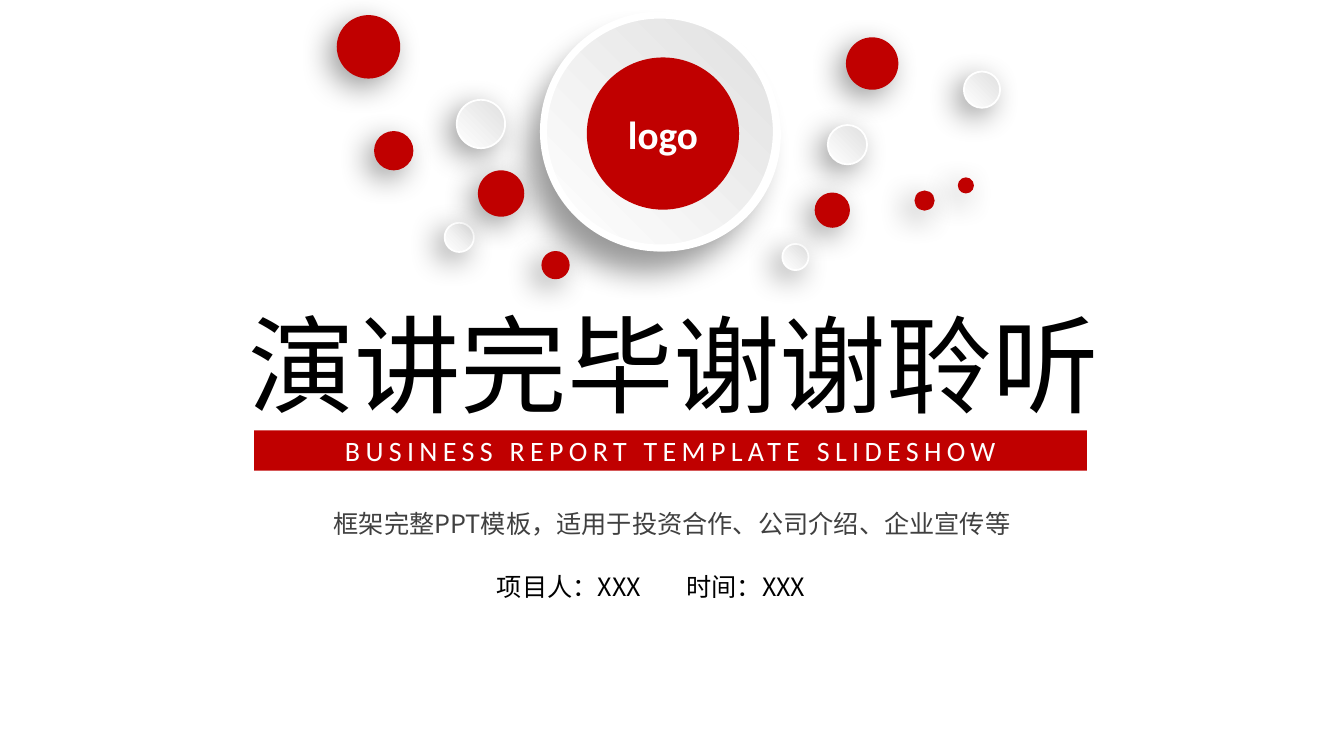
from lxml.etree import SubElement
from pptx import Presentation
from pptx.dml.color import RGBColor
from pptx.enum.shapes import MSO_SHAPE as Shape
from pptx.enum.text import MSO_ANCHOR as Anchor, MSO_AUTO_SIZE as AutoSize, PP_ALIGN as Align
from pptx.oxml.ns import qn
from pptx.util import Inches, Pt

# Content
TITLE = "演讲完毕谢谢聆听"
BANNER = "BUSINESS REPORT TEMPLATE SLIDESHOW"
SUMMARY = "框架完整PPT模板，适用于投资合作、公司介绍、企业宣传等"
DETAILS = "项目人：XXX\t时间：XXX"
BADGE = "logo"

COLORS = {"red": "C00000", "silver": "E0E0E0", "white": "FFFFFF",
          "black": "000000", "gray": "404040"}
LATIN, CHINESE = "Calibri", "Noto Sans CJK SC"

# Grid of tenths of an inch; circles are centre column, centre row, diameter
CELL = Inches(0.1)
SILVER_DOTS = [(97.4, 8.9, 3.6), (45.55, 23.55, 2.9), (84.05, 14.35, 3.9),
               (47.7, 12.3, 4.8), (78.9, 25.5, 2.6)]
RED_DOTS = [(36.55, 4.65, 6.3), (49.7, 19.2, 4.6), (39.05, 14.95, 3.9),
            (82.55, 20.85, 3.5), (86.5, 6.3, 5.2), (91.7, 19.9, 2),
            (95.8, 18.4, 1.6), (55.1, 26.3, 2.8)]
BADGE_BASE = (65.85, 13.35, 22.5)
BADGE_RING = (65.45, 13.05, 23.1)
BADGE_CORE = (65.75, 13.25, 15.1)
# Boxes are left, top, width, height
TITLE_BOX = (23.6, 29.2, 87.3, 13.8)
BANNER_BOX = (25.2, 42.7, 82.6, 4)
SUMMARY_BOX = (28.6, 49.9, 76.1, 4)
DETAILS_BOX = (48.3, 56.2, 42, 4)
DETAILS_TAB = 18.8


def cells(*lengths):
    return [round(length * CELL) for length in lengths]


def color(name):
    return RGBColor.from_string(COLORS[name])


def add_shadow(shape, distance):
    effects = shape._element.spPr.find(qn("a:effectLst"))
    shadow = SubElement(effects, qn("a:outerShdw"), blurRad=str(Pt(22)),
                        dist=str(Pt(distance)), dir=str(135 * 60000),
                        algn="tr", rotWithShape="0")
    tint = SubElement(shadow, qn("a:srgbClr"), val=COLORS["black"])
    SubElement(tint, qn("a:alpha"), val="40000")


def add_solid(shapes, kind, box):
    shape = shapes.add_shape(kind, *cells(*box))
    shape.shadow.inherit = False
    shape.fill.solid()
    shape.fill.fore_color.rgb = color("red")
    shape.line.fill.background()
    return shape


def add_circle(shapes, circle, border=0, shadow=0):
    column, row, size = circle
    box = (column - size / 2, row - size / 2, size, size)
    shape = add_solid(shapes, Shape.OVAL, box)
    if border:
        shape.fill.gradient()
        shape.fill.gradient_angle = 225
        for stop, name in zip(shape.fill.gradient_stops, ("silver", "white")):
            stop.color.rgb = color(name)
        shape.line.color.rgb = color("white")
        shape.line.width = Pt(border)
    if shadow:
        add_shadow(shape, shadow)
    return shape


def write(shape, text, size, ink, font=CHINESE, align=Align.LEFT,
          anchor=Anchor.TOP, wrap=True, bold=False, spacing=0, tab=0):
    frame = shape.text_frame
    frame.text = text
    frame.word_wrap = wrap
    frame.auto_size = AutoSize.NONE
    frame.vertical_anchor = anchor
    paragraph = frame.paragraphs[0]
    paragraph.alignment = align
    if tab:
        tabs = SubElement(paragraph._p.get_or_add_pPr(), qn("a:tabLst"))
        SubElement(tabs, qn("a:tab"), pos=str(cells(tab)[0]), algn="l")
    paragraph.font.size = Pt(size)
    paragraph.font.bold = bold
    paragraph.font.color.rgb = color(ink)
    paragraph.font.name = font
    # East Asian face and letter spacing belong to the run
    for run in paragraph.runs:
        properties = run._r.get_or_add_rPr()
        SubElement(properties, qn("a:ea"), typeface=font)
        if spacing:
            properties.set("spc", str(round(spacing * 100)))


def main():
    presentation = Presentation()
    presentation.slide_width = Inches(13.33)
    presentation.slide_height = Inches(7.5)
    slide = presentation.slides.add_slide(presentation.slide_layouts[5])
    shapes = slide.shapes

    # Circles
    add_circle(shapes, BADGE_BASE, border=5, shadow=20)
    for dot in SILVER_DOTS:
        add_circle(shapes, dot, border=1.25, shadow=8)
    for dot in RED_DOTS:
        add_circle(shapes, dot, shadow=8)

    # Badge
    badge = shapes.add_group_shape()
    add_circle(badge.shapes, BADGE_RING, border=5)
    core = add_circle(badge.shapes, BADGE_CORE)
    write(core, BADGE, 28, "white", LATIN, Align.CENTER, Anchor.MIDDLE, bold=True)

    # Title and banner
    title = shapes.title
    title.left, title.top, title.width, title.height = cells(*TITLE_BOX)
    write(title, TITLE, 76, "black", wrap=False)
    banner = add_solid(shapes, Shape.RECTANGLE, BANNER_BOX)
    write(banner, BANNER, 20, "white", LATIN, Align.CENTER, Anchor.MIDDLE, spacing=3.8)

    # Summary and details
    summary = shapes.add_textbox(*cells(*SUMMARY_BOX))
    write(summary, SUMMARY, 18, "gray", align=Align.CENTER)
    details = shapes.add_textbox(*cells(*DETAILS_BOX))
    write(details, DETAILS, 18, "black", tab=DETAILS_TAB)

    presentation.save("out.pptx")


if __name__ == "__main__":
    main()
